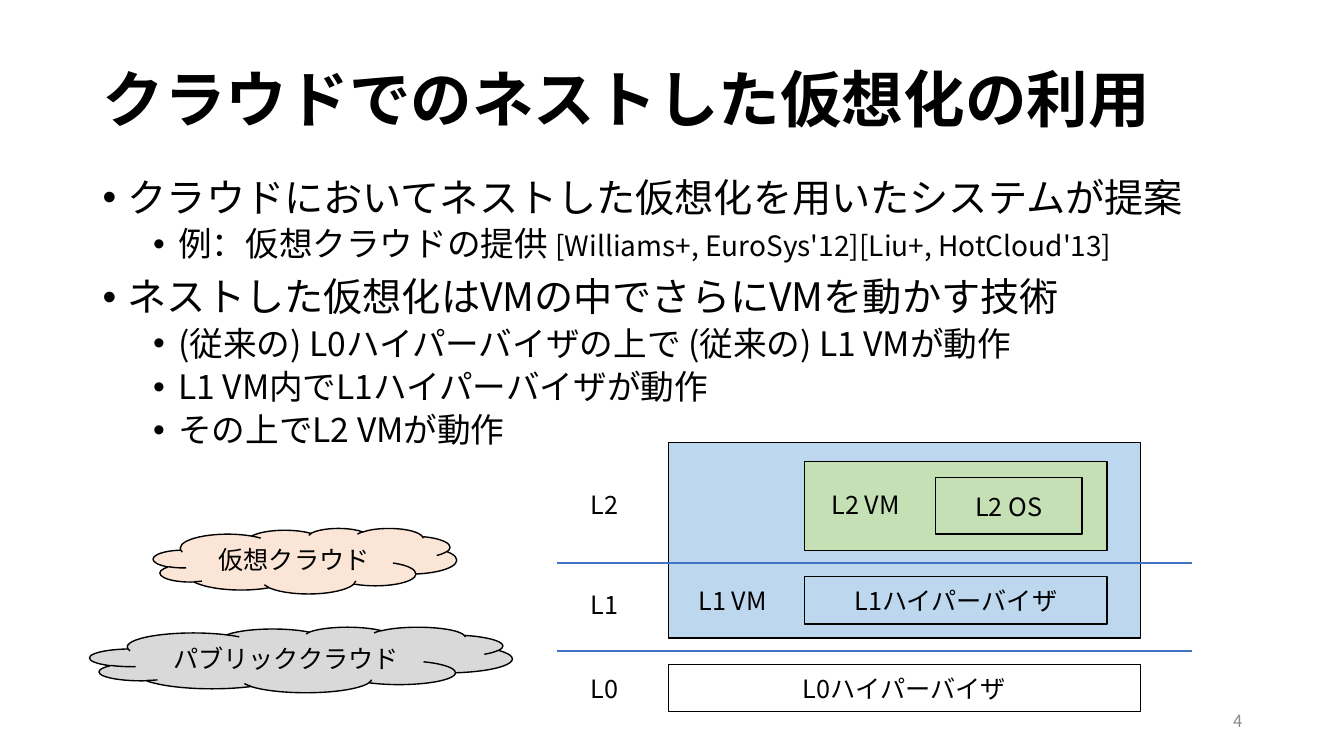
from dataclasses import dataclass

from lxml import etree
from pptx import Presentation
from pptx import util as u
from pptx.dml.color import RGBColor
from pptx.enum import shapes, text
from pptx.oxml import ns

FONT = "Noto Sans CJK JP"
COLORS = {
    "black": "000000", "white": "FFFFFF", "blue": "BDD7EE", "green": "C5E0B4",
    "gray": "D9D9D9", "peach": "FBE5D6", "divider": "4472C4", "number": "8C8C8C",
}
RECTANGLE = shapes.MSO_SHAPE.RECTANGLE
CLOUD = shapes.MSO_SHAPE.CLOUD
MIDDLE = text.MSO_ANCHOR.MIDDLE


@dataclass(frozen=True)
class Box:
    left: float
    top: float
    width: float
    height: float

    def lengths(self) -> list:
        return [u.Inches(v) for v in (self.left, self.top, self.width, self.height)]


@dataclass(frozen=True)
class Block:
    box: Box
    fill: str
    caption: str = ""
    kind: shapes.MSO_SHAPE = RECTANGLE


@dataclass(frozen=True)
class Label:
    box: Box
    caption: str


@dataclass(frozen=True)
class Run:
    caption: str
    size: int


@dataclass(frozen=True)
class Bullet:
    level: int
    runs: tuple[Run, ...]


BULLETS = [
    Bullet(0, (Run("クラウドにおいてネストした仮想化を用いたシステムが提案", 28),)),
    Bullet(1, (Run("例：仮想クラウドの提供 ", 24),
               Run("[Williams+, EuroSys'12][Liu+, HotCloud'13]", 20))),
    Bullet(0, (Run("ネストした仮想化はVMの中でさらにVMを動かす技術", 28),)),
    Bullet(1, (Run("(従来の) L0ハイパーバイザの上で (従来の) L1 VMが動作", 24),)),
    Bullet(1, (Run("L1 VM内でL1ハイパーバイザが動作", 24),)),
    Bullet(1, (Run("その上でL2 VMが動作", 24),)),
]
BLOCKS = [
    Block(Box(6.63, 6.59, 4.68, 0.47), "white", "L0ハイパーバイザ"),
    Block(Box(6.63, 4.39, 4.68, 1.94), "blue"),
    Block(Box(7.98, 4.58, 3, 0.88), "green"),
    Block(Box(7.98, 5.72, 3, 0.47), "blue", "L1ハイパーバイザ"),
    Block(Box(9.28, 4.74, 1.45, 0.56), "green", "L2 OS"),
    Block(Box(0.89, 6.22, 4.19, 0.65), "gray", "パブリッククラウド", CLOUD),
    Block(Box(1.52, 5.24, 3.01, 0.65), "peach", "仮想クラウド", CLOUD),
]
LABELS = [
    Label(Box(5.76, 6.63, 0.49, 0.4), "L0"),
    Label(Box(5.76, 5.8, 0.49, 0.4), "L1"),
    Label(Box(5.76, 4.81, 0.49, 0.4), "L2"),
    Label(Box(6.83, 5.76, 0.96, 0.4), "L1 VM"),
    Label(Box(8.15, 4.81, 0.96, 0.4), "L2 VM"),
]
DIVIDER_LEFT, DIVIDER_RIGHT = 5.52, 11.82
DIVIDER_TOPS = [5.59, 6.46]


def rgb(name: str) -> RGBColor:
    return RGBColor.from_string(COLORS[name])


def add_run(paragraph, caption: str, size: int, color: str = "black",
            font: str = FONT, bold: bool = False) -> None:
    run = paragraph.add_run()
    run.text = caption
    run.font.size = u.Pt(size)
    run.font.bold = bold
    run.font.color.rgb = rgb(color)
    run.font.name = font
    east_asian = etree.SubElement(run.font._element, ns.qn("a:ea"))
    east_asian.set("typeface", FONT)


def add_frame(slide, box: Box, wrap: bool = True, anchor=text.MSO_ANCHOR.TOP):
    """Add a text box and return its text frame."""
    frame = slide.shapes.add_textbox(*box.lengths()).text_frame
    frame.word_wrap = wrap
    frame.vertical_anchor = anchor
    return frame


def add_title(slide) -> None:
    frame = add_frame(slide, Box(0.92, 0.4, 11.5, 1.23), anchor=MIDDLE)
    paragraph = frame.paragraphs[0]
    paragraph.line_spacing = 0.9
    add_run(paragraph, "クラウドでのネストした仮想化の利用", 44, font="Arial", bold=True)


def add_bullets(slide) -> None:
    frame = add_frame(slide, Box(0.92, 1.72, 11.5, 5.03))
    for index, bullet in enumerate(BULLETS):
        paragraph = frame.add_paragraph() if index else frame.paragraphs[0]
        paragraph.level = bullet.level
        paragraph.line_spacing = 0.9
        paragraph.space_before = u.Pt(5 if bullet.level else 10)
        properties = paragraph._p.get_or_add_pPr()
        properties.set("marL", str(u.Inches(0.25 + 0.5 * bullet.level)))
        properties.set("indent", str(u.Inches(-0.25)))
        etree.SubElement(properties, ns.qn("a:buFont")).set("typeface", "Arial")
        etree.SubElement(properties, ns.qn("a:buChar")).set("char", "•")
        for run in bullet.runs:
            add_run(paragraph, run.caption, run.size)


def add_block(slide, block: Block) -> None:
    shape = slide.shapes.add_shape(block.kind, *block.box.lengths())
    shape.shadow.inherit = False
    shape.fill.solid()
    shape.fill.fore_color.rgb = rgb(block.fill)
    shape.line.color.rgb = rgb("black")
    shape.line.width = u.Pt(1)
    if block.caption:
        shape.text_frame.vertical_anchor = MIDDLE
        paragraph = shape.text_frame.paragraphs[0]
        paragraph.alignment = text.PP_ALIGN.CENTER
        add_run(paragraph, block.caption, 18)


def add_label(slide, label: Label) -> None:
    frame = add_frame(slide, label.box, wrap=False)
    add_run(frame.paragraphs[0], label.caption, 18)


def add_divider(slide, top: float) -> None:
    line = slide.shapes.add_connector(
        shapes.MSO_CONNECTOR.STRAIGHT, u.Inches(DIVIDER_LEFT), u.Inches(top),
        u.Inches(DIVIDER_RIGHT), u.Inches(top))
    line.line.color.rgb = rgb("divider")
    line.line.width = u.Pt(1.5)
    etree.SubElement(line._element.spPr, ns.qn("a:effectLst"))


def add_slide_number(slide) -> None:
    frame = add_frame(slide, Box(9.42, 6.95, 3, 0.4), anchor=MIDDLE)
    paragraph = frame.paragraphs[0]
    paragraph.alignment = text.PP_ALIGN.RIGHT
    add_run(paragraph, "4", 12, "number")


def main() -> None:
    presentation = Presentation()
    presentation.slide_width = u.Inches(13.33)
    presentation.slide_height = u.Inches(7.5)
    slide = presentation.slides.add_slide(presentation.slide_layouts[6])
    add_title(slide)
    add_bullets(slide)
    for block in BLOCKS:
        add_block(slide, block)
    for label in LABELS:
        add_label(slide, label)
    for top in DIVIDER_TOPS:
        add_divider(slide, top)
    add_slide_number(slide)
    presentation.save("out.pptx")


if __name__ == "__main__":
    main()
